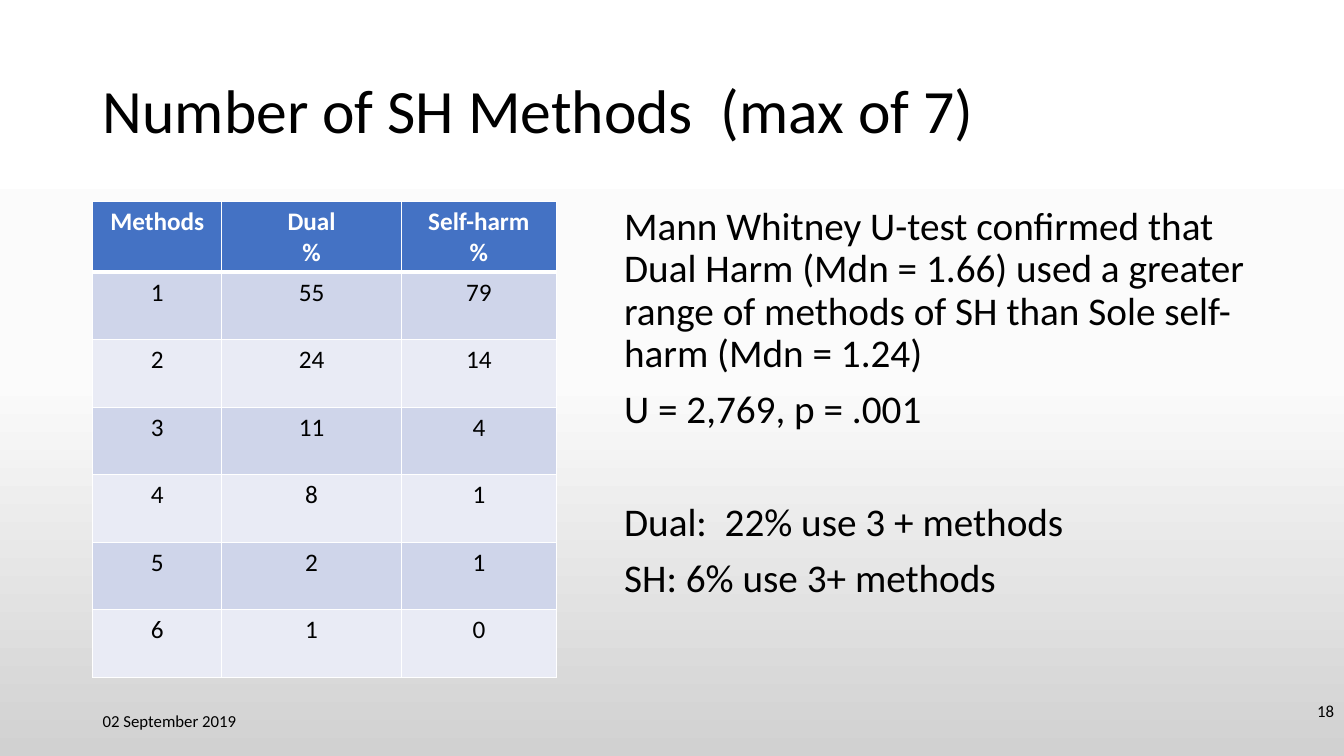
from copy import deepcopy
from dataclasses import dataclass

from lxml.etree import SubElement
from pptx import Presentation
from pptx.dml.color import RGBColor
from pptx.enum.text import MSO_ANCHOR, MSO_AUTO_SIZE, PP_ALIGN
from pptx.oxml.ns import qn
from pptx.util import Inches, Pt

TITLE = "Number of SH Methods  (max of 7)"
# Each finding: text, space before in points
FINDINGS = [
    ("Mann Whitney U-test confirmed that Dual Harm (Mdn = 1.66) used a greater "
     "range of methods of SH than Sole self-harm (Mdn = 1.24)", 10),
    ("U = 2,769, p = .001", 10),
    ("Dual:  22% use 3 + methods", 50),
    ("SH: 6% use 3+ methods", 10),
]
METHOD_ROWS = [
    ("Methods", "Dual\n%", "Self-harm\n%"),
    (1, 55, 79),
    (2, 24, 14),
    (3, 11, 4),
    (4, 8, 1),
    (5, 2, 1),
    (6, 1, 0),
]
DATE = "02 September 2019"
SLIDE_NUMBER = "18"

# Left, top, width, height in inches
SLIDE_SIZE = (13.33, 7.5)
LEFT_MARGIN, CONTENT_TOP = 0.92, 2
TITLE_BOX = (LEFT_MARGIN, 0.4, 11.5, 1.45)
FINDINGS_BOX = (6.09, CONTENT_TOP, 6.68, 4.61)
DATE_BOX = (LEFT_MARGIN, 6.95, 3, 0.4)
NUMBER_BOX = (10.22, 6.79, 3.11, 0.52)
COLUMN_WIDTHS = (1.28, 1.78, 1.54)
ROW_HEIGHT = 0.67


@dataclass(frozen=True)
class Theme:
    font: str = "Calibri"
    title: int = 44
    body: int = 28
    table: int = 18
    footer: int = 12
    text: str = "000000"
    light: str = "FFFFFF"
    header: str = "4472C4"
    bands: tuple = ("CFD5EA", "E9EBF5")
    background: tuple = ((0, "FFFFFF"), (0.5, "FBFBFB"), (1, "D1D1D1"))


THEME = Theme()


def style(paragraph, size, color=THEME.text, align=PP_ALIGN.LEFT, bold=False):
    paragraph.alignment = align
    font = paragraph.font
    font.name, font.size, font.bold = THEME.font, Pt(size), bold
    font.color.rgb = RGBColor.from_string(color)


def place(shape, box):
    shape.left, shape.top, shape.width, shape.height = map(Inches, box)


def paint_background(slide):
    fill = slide.background.fill
    fill.gradient()
    fill.gradient_angle = 270
    stop_list = slide.element.find(".//" + qn("a:gsLst"))
    stop_list.append(deepcopy(stop_list[0]))
    for stop, (position, color) in zip(fill.gradient_stops, THEME.background):
        stop.position = position
        stop.color.rgb = RGBColor.from_string(color)


def add_title(slide):
    title = slide.shapes.title
    place(title, TITLE_BOX)
    frame = title.text_frame
    frame.text = TITLE
    frame.auto_size = MSO_AUTO_SIZE.NONE
    frame.vertical_anchor = MSO_ANCHOR.MIDDLE
    style(frame.paragraphs[0], THEME.title)
    frame.paragraphs[0].line_spacing = 0.9


def add_findings(slide):
    body = slide.placeholders[1]
    place(body, FINDINGS_BOX)
    frame = body.text_frame
    frame.text = "\n".join(text for text, _ in FINDINGS)
    frame.auto_size = MSO_AUTO_SIZE.NONE
    for paragraph, (_, space) in zip(frame.paragraphs, FINDINGS):
        style(paragraph, THEME.body)
        paragraph.line_spacing = 0.9
        paragraph.space_before = Pt(space)
        properties = paragraph._p.get_or_add_pPr()
        properties.set("marL", "0")
        properties.set("indent", "0")
        properties.insert_element_before(
            properties.makeelement(qn("a:buNone")), "a:tabLst", "a:defRPr", "a:extLst")


def add_footer(slide, text, box, align):
    footer = slide.shapes.add_textbox(*map(Inches, box))
    frame = footer.text_frame
    frame.word_wrap = True
    frame.vertical_anchor = MSO_ANCHOR.MIDDLE
    frame.text = text
    style(frame.paragraphs[0], THEME.footer, align=align)


def add_borders(cell, top, bottom):
    """Draw light lines round a cell; top and bottom are widths in points."""
    properties = cell._tc.get_or_add_tcPr()
    for side, width in (("L", 1), ("R", 1), ("T", top), ("B", bottom)):
        line = SubElement(properties, qn(f"a:ln{side}"), w=str(Pt(width)))
        solid = SubElement(line, qn("a:solidFill"))
        SubElement(solid, qn("a:srgbClr"), val=THEME.light)


def add_methods_table(slide):
    box = (LEFT_MARGIN, CONTENT_TOP, sum(COLUMN_WIDTHS), ROW_HEIGHT * len(METHOD_ROWS))
    table = slide.shapes.add_table(
        len(METHOD_ROWS), len(COLUMN_WIDTHS), *map(Inches, box)).table
    for column, width in zip(table.columns, COLUMN_WIDTHS):
        column.width = Inches(width)
    for r, values in enumerate(METHOD_ROWS):
        is_header = r == 0
        fill = THEME.header if is_header else THEME.bands[(r - 1) % 2]
        color = THEME.light if is_header else THEME.text
        table.rows[r].height = Inches(ROW_HEIGHT)
        for c, value in enumerate(values):
            cell = table.cell(r, c)
            cell.text = str(value)
            for paragraph in cell.text_frame.paragraphs:
                style(paragraph, THEME.table, color, PP_ALIGN.CENTER, is_header)
            add_borders(cell, top=3 if r == 1 else 1, bottom=3 if is_header else 1)
            cell.fill.solid()
            cell.fill.fore_color.rgb = RGBColor.from_string(fill)


def main():
    presentation = Presentation()
    presentation.slide_width, presentation.slide_height = map(Inches, SLIDE_SIZE)
    slide = presentation.slides.add_slide(presentation.slide_layouts[1])
    paint_background(slide)
    add_title(slide)
    add_findings(slide)
    add_footer(slide, DATE, DATE_BOX, PP_ALIGN.LEFT)
    add_footer(slide, SLIDE_NUMBER, NUMBER_BOX, PP_ALIGN.RIGHT)
    add_methods_table(slide)
    presentation.save("out.pptx")


if __name__ == "__main__":
    main()
